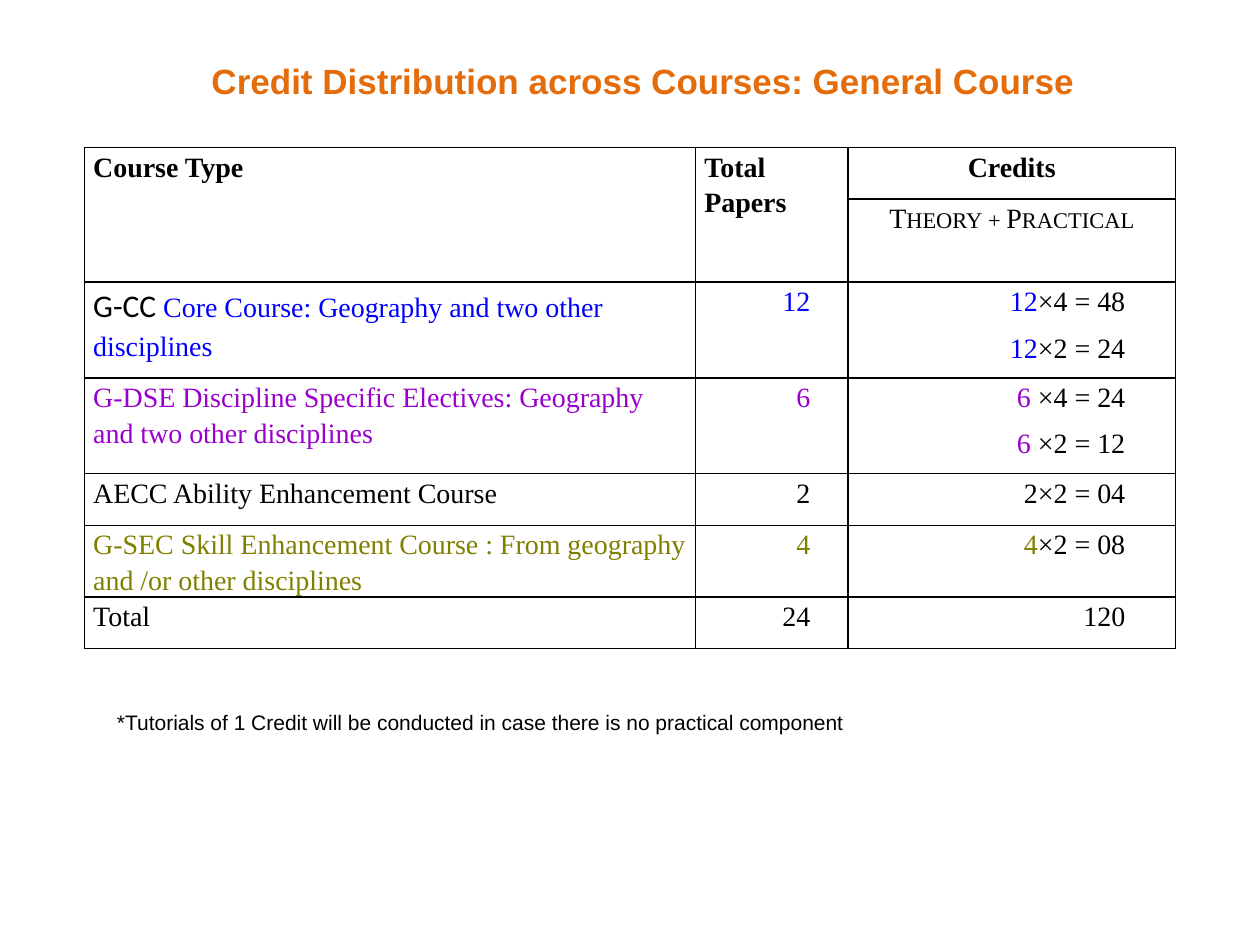
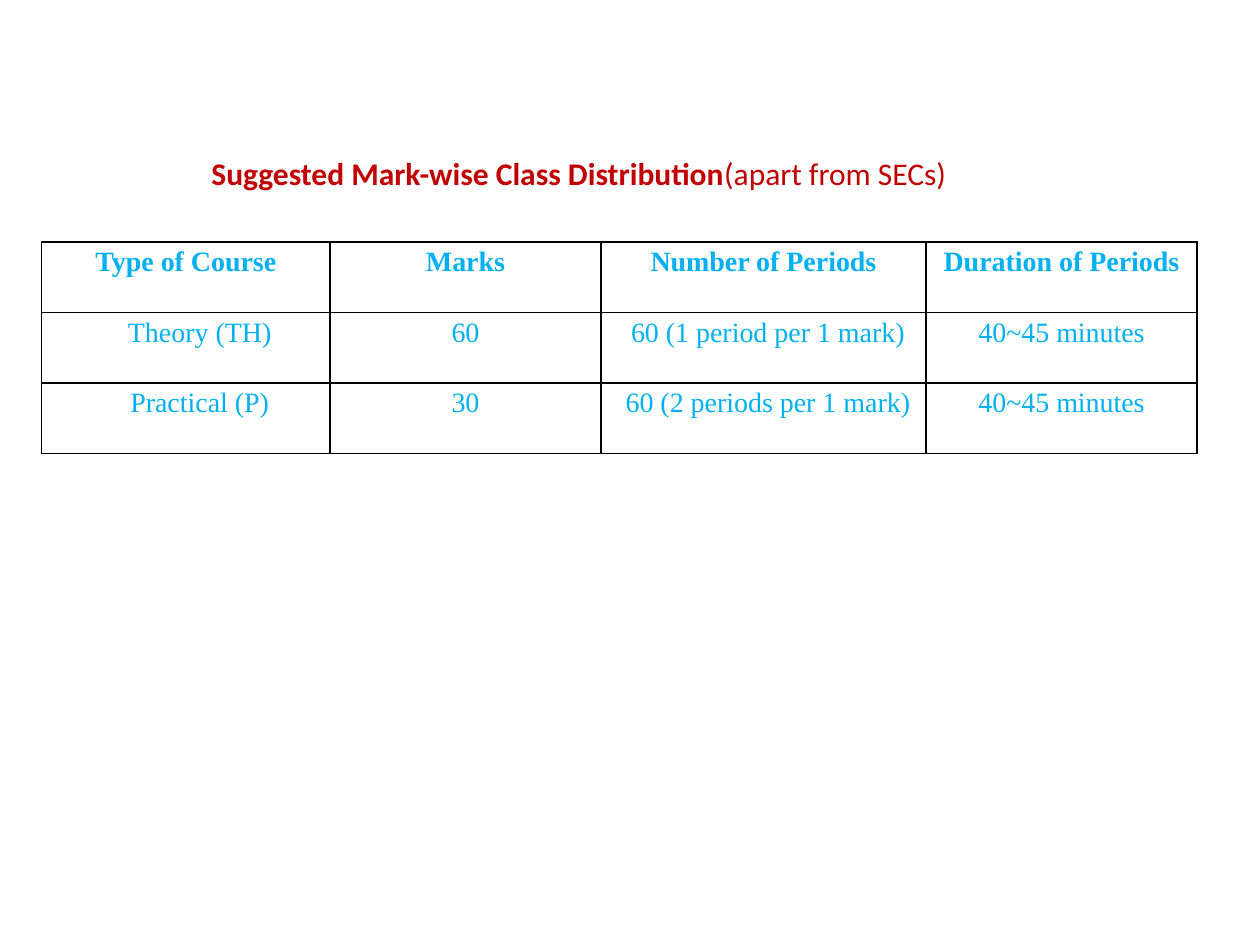
from dataclasses import dataclass

from lxml import etree
from pptx import Presentation
from pptx import util as u
from pptx.dml.color import RGBColor
from pptx.enum import text
from pptx.oxml import ns

ALIGN = text.PP_ALIGN


@dataclass(frozen=True)
class Theme:
    black: str = "000000"
    orange: str = "E46C0A"
    red: str = "C00000"
    core: str = "0000FF"
    elective: str = "9900CC"
    skill: str = "808000"
    sky: str = "00B0F0"
    table_font: str = "Times New Roman"
    sans: str = "Arial"
    body: str = "Calibri"
    title_size: int = 20
    subtitle_size: int = 18
    table_size: int = 16
    note_size: int = 12
    border: float = 1
    line_spacing: float = 1.15
    gap: float = 3
    cell_inset: float = 0.07


THEME = Theme()


@dataclass(frozen=True)
class Span:
    words: str
    color: str = THEME.black
    bold: bool = False
    size: int = THEME.table_size
    font: str = THEME.table_font
    small_caps: bool = False


@dataclass(frozen=True)
class Entry:
    lines: list
    align: object = ALIGN.LEFT
    indent_left: float = 0
    indent_right: float = 0


def add_spans(paragraph, spans):
    for span in spans:
        run = paragraph.add_run()
        run.text = span.words
        run.font.name = span.font
        run.font.size = u.Pt(span.size)
        run.font.bold = span.bold
        run.font.color.rgb = RGBColor.from_string(span.color)
        if span.small_caps:
            run._r.get_or_add_rPr().set("cap", "small")


def add_label(slide, left, top, width, height, spans):
    frame = slide.shapes.add_textbox(*map(u.Inches, (left, top, width, height))).text_frame
    frame.word_wrap = True
    frame.auto_size = text.MSO_AUTO_SIZE.SHAPE_TO_FIT_TEXT
    add_spans(frame.paragraphs[0], spans)


def style_cell(cell):
    cell.margin_left = cell.margin_right = u.Inches(THEME.cell_inset)
    cell.margin_top = cell.margin_bottom = 0
    properties = cell._tc.get_or_add_tcPr()
    for side in ("lnL", "lnR", "lnT", "lnB"):
        line = etree.SubElement(properties, ns.qn(f"a:{side}"), w=str(u.Pt(THEME.border)))
        fill = etree.SubElement(line, ns.qn("a:solidFill"))
        etree.SubElement(fill, ns.qn("a:srgbClr"), val=THEME.black)
    cell.fill.background()


def fill_cell(cell, entry):
    frame = cell.text_frame
    for index, spans in enumerate(entry.lines):
        paragraph = frame.add_paragraph() if index else frame.paragraphs[0]
        paragraph.alignment = entry.align
        paragraph.line_spacing = THEME.line_spacing
        paragraph.space_before = u.Pt(THEME.gap if index else 0)
        paragraph.space_after = u.Pt(THEME.gap)
        properties = paragraph._p.get_or_add_pPr()
        properties.set("marL", str(u.Inches(entry.indent_left)))
        properties.set("marR", str(u.Inches(entry.indent_right)))
        add_spans(paragraph, spans)


def add_grid(slide, left, top, widths, heights, rows, merges=()):
    box = map(u.Inches, (left, top, sum(widths), sum(heights)))
    table = slide.shapes.add_table(len(heights), len(widths), *box).table
    table.first_row = table.horz_banding = False
    for column, width in zip(table.columns, widths):
        column.width = u.Inches(width)
    for row, height in zip(table.rows, heights):
        row.height = u.Inches(height)
    for cell in table.iter_cells():
        style_cell(cell)
    for start, end in merges:
        table.cell(*start).merge(table.cell(*end))
    for r, entries in enumerate(rows):
        for c, entry in enumerate(entries):
            if entry:
                fill_cell(table.cell(r, c), entry)


def heading(words, align=ALIGN.LEFT, color=THEME.black):
    return Entry([[Span(words, color, bold=True)]], align)


def course_row(course, papers, credits, color=THEME.black):
    credit_lines = [[Span(count, color), Span(product)] for count, product in credits]
    return [
        Entry([course]),
        Entry([[Span(papers, color)]], ALIGN.RIGHT, indent_right=0.23),
        Entry(credit_lines, ALIGN.RIGHT, indent_right=0.33),
    ]


def period_row(course, marks, periods):
    values = (course, marks, periods, "40~45 minutes")
    indents = ((0.22, 0), (0, 0), (0.07, 0), (0, 0))
    return [Entry([[Span(value, THEME.sky)]], ALIGN.CENTER, *indent)
            for value, indent in zip(values, indents)]


def build_credit_slide(slide):
    practical = Span("Theory + Practical", small_caps=True)
    core = [Span("G-CC", size=THEME.subtitle_size, font=THEME.body),
            Span(" Core Course: Geography and two other disciplines", THEME.core)]
    elective = [Span("G-DSE Discipline Specific Electives: Geography and two other disciplines",
                     THEME.elective)]
    skill = [Span("G-SEC Skill Enhancement Course : From geography and /or other disciplines",
                  THEME.skill)]
    rows = [
        [heading("Course Type"), heading("Total Papers"), heading("Credits", ALIGN.CENTER)],
        [None, None, Entry([[practical]], ALIGN.CENTER)],
        course_row(core, "12", [("12", "×4 = 48"), ("12", "×2 = 24")], THEME.core),
        course_row(elective, "6", [("6 ", "×4 = 24"), ("6 ", "×2 = 12")], THEME.elective),
        course_row([Span("AECC Ability Enhancement Course")], "2", [("2", "×2 = 04")]),
        course_row(skill, "4", [("4", "×2 = 08")], THEME.skill),
        [Entry([[Span("Total")]]),
         Entry([[Span("24")]], ALIGN.RIGHT, indent_right=0.23),
         Entry([[Span("120")]], ALIGN.RIGHT, indent_right=0.33)],
    ]
    add_grid(slide, 0.67, 1.17, [4.85, 1.21, 2.6],
             [0.41, 0.66, 0.76, 0.76, 0.41, 0.41, 0.41], rows,
             merges=[((0, column), (1, column)) for column in range(2)])
    add_label(slide, 1.58, 0.42, 7.42, 0.44, [
        Span("Credit Distribution across Courses: General Course", THEME.orange, True,
             THEME.title_size, THEME.sans)])
    add_label(slide, 0.83, 5.58, 8.25, 0.3, [
        Span("*Tutorials of 1 Credit will be conducted in case there is no practical component",
             size=THEME.note_size, font=THEME.sans)])


def build_period_slide(slide):
    headings = ("Type of Course", "Marks", "Number of Periods", "Duration of Periods")
    rows = [
        [heading(words, ALIGN.CENTER, THEME.sky) for words in headings],
        period_row("Theory (TH)", "60", "60 (1 period per 1 mark)"),
        period_row("Practical (P)", "30", "60 (2 periods per 1 mark)"),
    ]
    add_grid(slide, 0.33, 1.92, [2.29, 2.15, 2.58, 2.15], [0.56] * len(rows), rows)
    add_label(slide, 1.58, 1.17, 6.67, 0.4, [
        Span("Suggested Mark-wise Class Distribution", THEME.red, True,
             THEME.subtitle_size, THEME.body),
        Span("(apart from SECs)", THEME.red, False, THEME.subtitle_size, THEME.body)])


def main():
    deck = Presentation()
    deck.slide_width, deck.slide_height = u.Inches(10), u.Inches(7.5)
    for build in (build_credit_slide, build_period_slide):
        build(deck.slides.add_slide(deck.slide_layouts[6]))
    deck.save("out.pptx")


if __name__ == "__main__":
    main()
